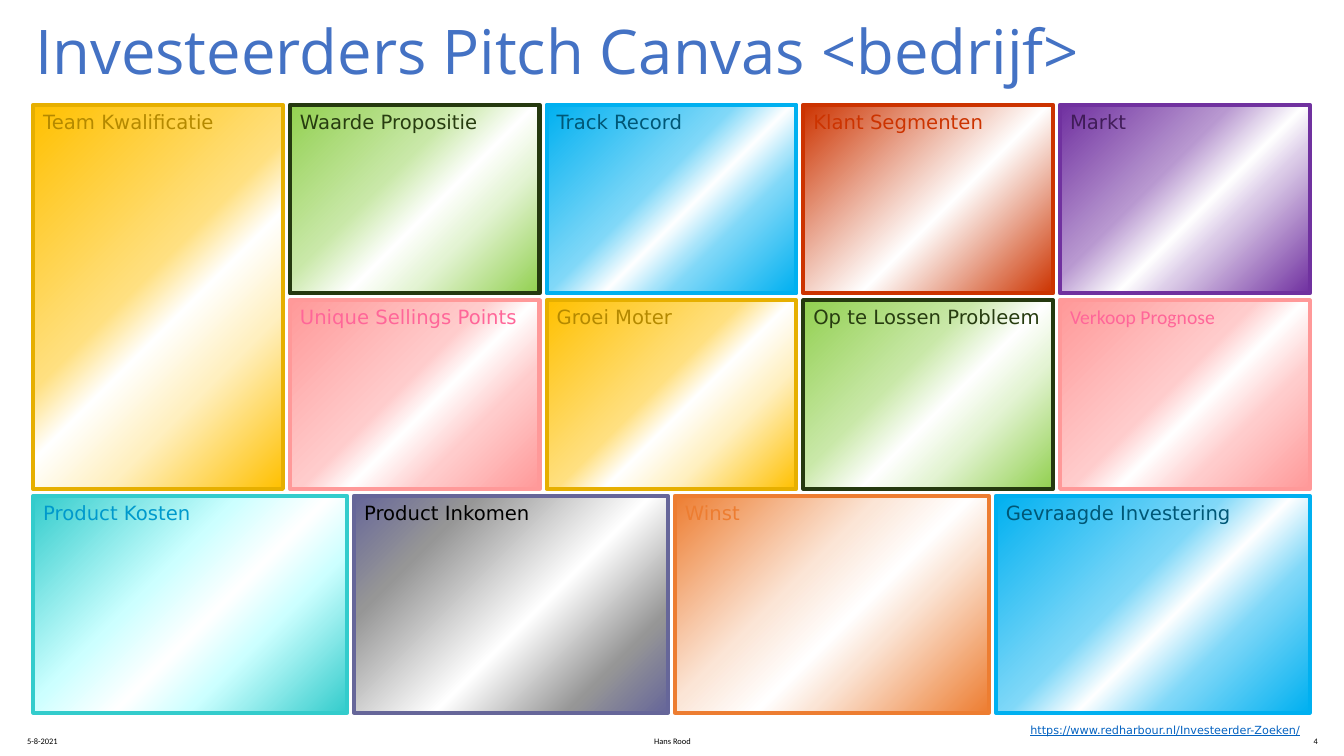
from lxml.etree import SubElement
from pptx import Presentation
from pptx.dml.color import RGBColor
from pptx.enum.shapes import MSO_SHAPE
from pptx.enum.text import MSO_ANCHOR, PP_ALIGN
from pptx.oxml.ns import qn
from pptx.util import Inches, Pt

COLORS = {
    "title": "4472C4", "black": "000000", "link": "0563C1", "white": "FFFFFF",
    "gold": "FFC000", "gold_mid": "FFE080", "gold_pale": "FFF0C0",
    "gold_line": "E6AF00", "gold_text": "B48900",
    "green": "92D050", "green_mid": "C9E8A8", "green_pale": "E4F4D4",
    "green_line": "25390F", "green_text": "273C10",
    "blue": "00B0F0", "blue_mid": "80D8F8", "blue_text": "005776",
    "red": "CC3300",
    "purple": "7030A0", "purple_mid": "B898D0", "purple_pale": "DCCCE8",
    "purple_line": "70319F", "purple_text": "401C58",
    "pink": "FF9999", "pink_mid": "FFCCCC", "pink_text": "FF6699",
    "teal": "33CCCC", "teal_mid": "CCFFFF", "teal_text": "0099CC",
    "slate": "666699", "slate_mid": "969696",
    "orange": "ED7D31", "orange_mid": "FBE5D6",
}

# Each style holds its edge colour, inner stops, line and text colour.
STYLES = {
    "gold": ("gold", [(45, "gold_mid"), (56, "white"), (72, "gold_pale")], "gold_line", "gold_text"),
    "green": ("green", [(39, "green_mid"), (56, "white"), (70, "green_pale")], "green_line", "green_text"),
    "blue": ("blue", [(43, "blue_mid"), (56, "white"), (71, "blue_mid")], "blue", "blue_text"),
    "red": ("red", [(56, "white")], "red", "red"),
    "purple": ("purple", [(39, "purple_mid"), (56, "white"), (66, "purple_pale")], "purple_line", "purple_text"),
    "pink": ("pink", [(45, "pink_mid"), (56, "white"), (72, "pink_mid")], "pink", "pink_text"),
    "teal": ("teal", [(39, "teal_mid"), (56, "white"), (70, "teal_mid")], "teal", "teal_text"),
    "slate": ("slate", [(23, "slate_mid"), (56, "white"), (81, "slate_mid")], "slate", "black"),
    "orange": ("orange", [(39, "orange_mid"), (56, "white"), (66, "orange_mid")], "orange", "orange"),
}

GAP = 0.07
UPPER_HEIGHT = 1.87

UPPER_COLUMNS = [
    [("Team Kwalificatie", "gold")],
    [("Waarde Propositie", "green"), ("Unique Sellings Points", "pink")],
    [("Track Record", "blue"), ("Groei Moter", "gold")],
    [("Klant Segmenten", "red"), ("Op te Lossen Probleem", "green")],
    [("Markt", "purple"), ("Verkoop Prognose", "pink")],
]
LOWER_ROW = [
    ("Product Kosten", "teal"),
    ("Product Inkomen", "slate"),
    ("Winst", "orange"),
    ("Gevraagde Investering", "blue"),
]
FONTS = {"Verkoop Prognose": "Calibri"}


def rgb(name):
    return RGBColor.from_string(COLORS[name])


def write_text(frame, text, *, size, color, font="DejaVu Sans", align=PP_ALIGN.LEFT,
               inset=None, spacing=None, underline=None):
    frame.word_wrap = True
    frame.vertical_anchor = MSO_ANCHOR.TOP
    if inset is not None:
        frame.margin_left = frame.margin_right = Inches(inset)
        frame.margin_top = frame.margin_bottom = Inches(inset)
    paragraph = frame.paragraphs[0]
    paragraph.alignment = align
    paragraph.line_spacing = spacing
    run = paragraph.add_run()
    run.text = text
    run.font.name = font
    run.font.size = Pt(size)
    run.font.color.rgb = rgb(color)
    run.font.underline = underline


def add_text(slide, box, text, **text_format):
    shape = slide.shapes.add_textbox(*map(Inches, box))
    write_text(shape.text_frame, text, **text_format)


def fill_gradient(shape, stops):
    shape.fill.gradient()
    shape.fill.gradient_angle = 315
    stop_list = shape._element.spPr.find(".//" + qn("a:gsLst"))
    for stop in list(stop_list):
        stop_list.remove(stop)
    for position, color in stops:
        stop = SubElement(stop_list, qn("a:gs"), pos=str(position * 1000))
        SubElement(stop, qn("a:srgbClr"), val=COLORS[color])


def add_panel(slide, box, text, style):
    edge, inner_stops, line, text_color = STYLES[style]
    shape = slide.shapes.add_shape(MSO_SHAPE.RECTANGLE, *map(Inches, box))
    shape.shadow.inherit = False
    fill_gradient(shape, [(0, edge), *inner_stops, (100, edge)])
    shape.line.color.rgb = rgb(line)
    shape.line.width = Pt(3)
    write_text(shape.text_frame, text, size=14, color=text_color,
               font=FONTS.get(text, "DejaVu Sans"))


def split(start, length, count):
    size = (length - GAP * (count - 1)) / count
    return [(start + index * (size + GAP), size) for index in range(count)]


def add_canvas(slide, box):
    left, top, width, height = box
    upper_total = 2 * UPPER_HEIGHT + GAP
    for (x, panel_width), panels in zip(split(left, width, len(UPPER_COLUMNS)), UPPER_COLUMNS):
        for (y, panel_height), panel in zip(split(top, upper_total, len(panels)), panels):
            add_panel(slide, (x, y, panel_width, panel_height), *panel)
    lower_top = top + upper_total + GAP
    lower_height = top + height - lower_top
    for (x, panel_width), panel in zip(split(left, width, len(LOWER_ROW)), LOWER_ROW):
        add_panel(slide, (x, lower_top, panel_width, lower_height), *panel)


def add_footer(slide, box):
    left, top, width, height = box
    small = {"size": 6, "color": "black", "font": "Calibri"}
    add_text(slide, (left, top, 3, height), "5-8-2021", **small)
    add_text(slide, (left + (width - 4.5) / 2, top, 4.5, height), "Hans Rood",
             align=PP_ALIGN.CENTER, **small)
    add_text(slide, (left + width - 3, top, 3, height), "4", align=PP_ALIGN.RIGHT, **small)
    add_text(slide, (left + 9.95, top - 0.12, 3.11, 0.24),
             "https://www.redharbour.nl/Investeerder-Zoeken/",
             size=8, color="link", underline=True)


def main():
    presentation = Presentation()
    presentation.slide_width = Inches(13.33)
    presentation.slide_height = Inches(7.5)
    slide = presentation.slides.add_slide(presentation.slide_layouts[6])
    add_text(slide, (0.22, 0.08, 13.01, 0.84), "Investeerders Pitch Canvas <bedrijf>",
             size=44, color="title", font="Open Sans", inset=0.13, spacing=0.9)
    add_canvas(slide, (0.33, 1.04, 12.66, 6.03))
    add_footer(slide, (0.17, 7.25, 13, 0.4))
    presentation.save("out.pptx")


if __name__ == "__main__":
    main()
